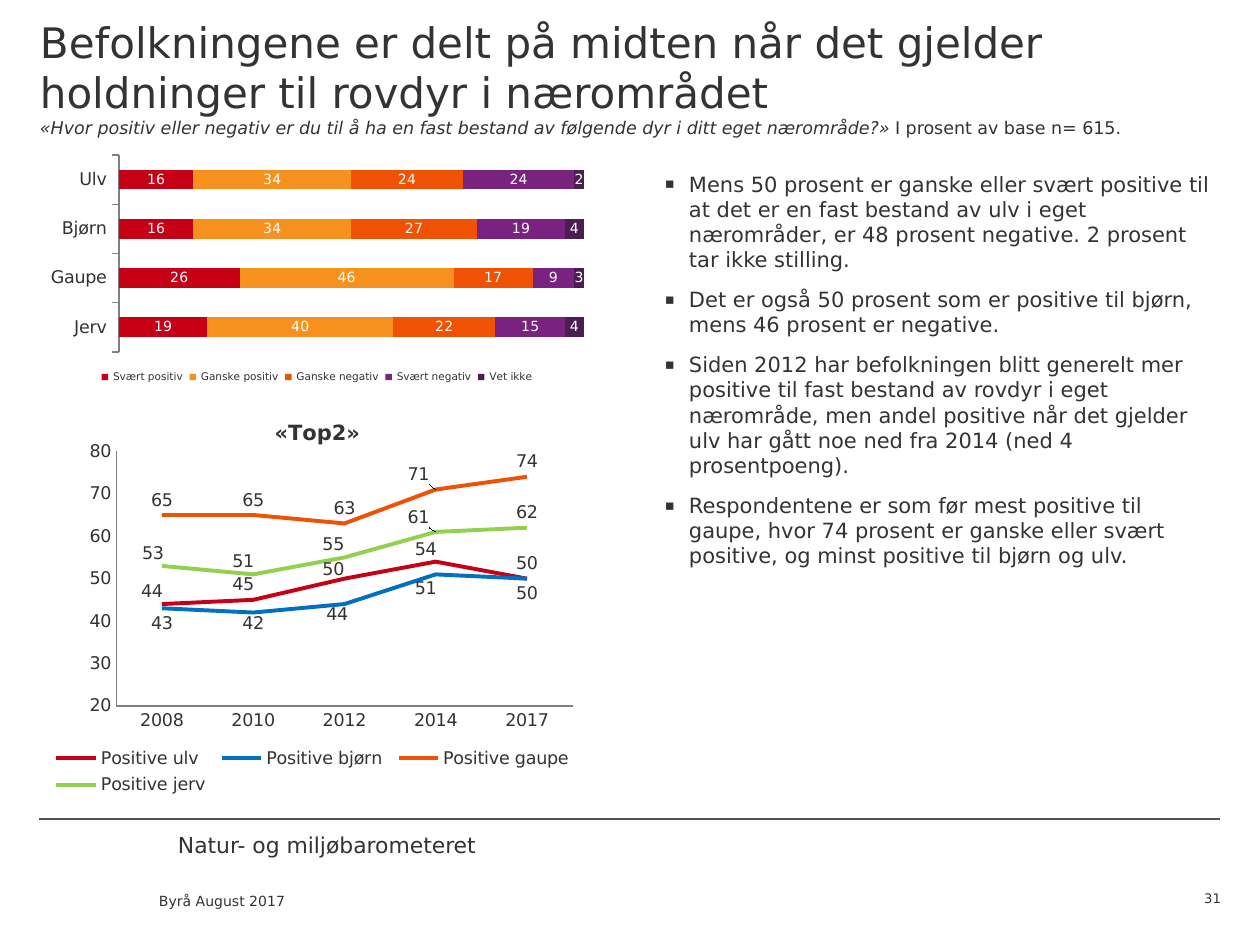
from lxml.etree import SubElement
from pptx import Presentation
from pptx.chart.data import CategoryChartData
from pptx.dml.color import RGBColor
from pptx.enum.chart import XL_CHART_TYPE as ChartType
from pptx.enum.chart import XL_LABEL_POSITION as LabelPosition
from pptx.enum.chart import XL_LEGEND_POSITION as LegendPosition
from pptx.enum.chart import XL_MARKER_STYLE as MarkerStyle
from pptx.enum.chart import XL_TICK_MARK as TickMark
from pptx.enum.shapes import MSO_CONNECTOR as Connector
from pptx.enum.text import MSO_ANCHOR as Anchor
from pptx.enum.text import PP_ALIGN as Align
from pptx.oxml import parse_xml
from pptx.oxml.ns import nsdecls, qn
from pptx.util import Pt

SCALE = 914400 / 126
FONT = "DejaVu Sans"
COLORS = {
    "text": "333333", "white": "FFFFFF", "rule": "525252", "axis": "808080",
    "red": "C50017", "amber": "F7911E", "orange": "EF5205", "purple": "7A2280",
    "plum": "4C1D52", "blue": "0070C0", "green": "92D050",
}
NO_LEADER_LINES = (
    f'<c:extLst {nsdecls("c")}><c:ext uri="{{CE6537A1-D6FC-4f65-9D91-7224C49458BB}}" '
    'xmlns:c15="http://schemas.microsoft.com/office/drawing/2012/chart">'
    '<c15:showLeaderLines val="0"/></c:ext></c:extLst>')


def px(value):
    return round(value * SCALE)


def color(name):
    return RGBColor.from_string(COLORS[name])


def set_layout(element, index, target=None, edge=True, **fractions):
    for old in element.findall(qn("c:layout")):
        element.remove(old)
    layout = parse_xml(f"<c:layout {nsdecls('c')}><c:manualLayout/></c:layout>")
    settings = {"layoutTarget": target} if target else {}
    if edge:
        settings.update(xMode="edge", yMode="edge")
    settings.update(fractions)
    for key, value in settings.items():
        SubElement(layout[0], qn(f"c:{key}")).set("val", str(value))
    element.insert(index, layout)


class SlideBuilder:
    def __init__(self, slide):
        self.slide = slide

    def style(self, font, size, name="text", italic=None, bold=None):
        font.name = FONT
        font.size = Pt(size)
        font.color.rgb = color(name)
        font.italic = italic
        font.bold = bold

    def run(self, paragraph, text, size, italic=None, bold=None):
        run = paragraph.add_run()
        run.text = text
        self.style(run.font, size, italic=italic, bold=bold)

    def text_frame(self, left, top, width, height, inset_top=0, anchor=Anchor.TOP):
        shape = self.slide.shapes.add_textbox(px(left), px(top), px(width), px(height))
        frame = shape.text_frame
        frame.word_wrap = True
        frame.vertical_anchor = anchor
        frame.margin_left = frame.margin_right = frame.margin_bottom = 0
        frame.margin_top = px(inset_top)
        return frame

    def label(self, text, size, box, align=Align.LEFT, anchor=Anchor.TOP):
        paragraph = self.text_frame(*box, anchor=anchor).paragraphs[0]
        paragraph.alignment = align
        self.run(paragraph, text, size)

    def heading(self, title, question, base, box):
        paragraph = self.text_frame(*box, inset_top=29).paragraphs[0]
        self.run(paragraph, title, 24)
        paragraph.add_line_break()
        self.run(paragraph, question, 10, italic=True)
        self.run(paragraph, base, 10)

    def bullets(self, texts, size, box):
        frame = self.text_frame(*box, inset_top=29)
        for index, text in enumerate(texts):
            paragraph = frame.add_paragraph() if index else frame.paragraphs[0]
            properties = paragraph._p.get_or_add_pPr()
            properties.set("marL", str(px(24)))
            properties.set("indent", str(-px(24)))
            paragraph.space_before = Pt(size * 0.2 if index else 0)
            paragraph.space_after = Pt(6)
            SubElement(properties, qn("a:buSzPct")).set("val", "70000")
            SubElement(properties, qn("a:buFont")).set("typeface", FONT)
            SubElement(properties, qn("a:buChar")).set("char", "▪")
            self.run(paragraph, text, size)

    def rule(self, left, right, y):
        line = self.slide.shapes.add_connector(
            Connector.STRAIGHT, px(left), px(y), px(right), px(y))
        line.line.color.rgb = color("rule")
        line.line.width = Pt(0.75)
        SubElement(line._element.spPr, qn("a:effectLst"))

    def chart(self, kind, categories, series, box, plot_layout, legend_size):
        data = CategoryChartData(number_format="0")
        data.categories = categories
        for name, _, values in series:
            data.add_series(name, values)
        chart = self.slide.shapes.add_chart(kind, *map(px, box), data).chart
        self.style(chart.font, 10)
        chart.has_title = False
        chart.has_legend = True
        chart.legend.position = LegendPosition.BOTTOM
        chart.legend.include_in_layout = False
        self.style(chart.legend.font, legend_size)
        chart.plots[0].vary_by_categories = False
        set_layout(chart._chartSpace.chart.plotArea, 0, target="inner", **plot_layout)
        chart.value_axis.has_major_gridlines = False
        for axis in (chart.category_axis, chart.value_axis):
            axis.major_tick_mark = axis.minor_tick_mark = TickMark.NONE
            axis.format.line.color.rgb = color("axis")
            axis.format.line.width = Pt(0.75)
            self.style(axis.tick_labels.font, 10)
        return chart

    def value_labels(self, series, size, name, position):
        labels = series.data_labels
        labels.show_value = True
        labels.number_format = "0"
        labels.number_format_is_linked = False
        labels.position = position
        self.style(labels.font, size, name)

    def stacked_bars(self, categories, series, box):
        chart = self.chart(ChartType.BAR_STACKED, categories, series, box,
                           dict(x=0.144, y=0.017, w=0.836, h=0.831), 6)
        chart.category_axis.reverse_order = True
        chart.category_axis.major_tick_mark = TickMark.OUTSIDE
        chart.value_axis.minimum_scale = 0
        chart.value_axis.maximum_scale = 100
        chart.value_axis.visible = False
        plot = chart.plots[0]
        plot.gap_width = 150
        plot.overlap = 100
        for item, (_, fill, _) in zip(plot.series, series):
            item.format.fill.solid()
            item.format.fill.fore_color.rgb = color(fill)
            self.value_labels(item, 8, "white", LabelPosition.CENTER)

    def trend_lines(self, title, categories, series, label_shifts, box):
        chart = self.chart(ChartType.LINE, categories, series, box,
                           dict(x=0.139, y=0.13, w=0.821, h=0.632), 10)
        chart.has_title = True
        paragraph = chart.chart_title.text_frame.paragraphs[0]
        self.run(paragraph, title, 12, bold=True)
        chart.chart_title.include_in_layout = True
        set_layout(chart._chartSpace.chart.find(qn("c:title")), 1, x=0.417, y=0.038)
        set_layout(chart.legend._element, 1, x=0.012, y=0.85, w=0.96, h=0.15)
        chart.value_axis.minimum_scale = 20
        chart.value_axis.maximum_scale = 80
        chart.value_axis.major_unit = 10
        for item, (name, stroke, _) in zip(chart.plots[0].series, series):
            item.smooth = False
            item.format.line.color.rgb = color(stroke)
            item.format.line.width = Pt(2.25)
            item.marker.style = MarkerStyle.NONE
            position = LabelPosition.BELOW if stroke == "blue" else LabelPosition.ABOVE
            self.value_labels(item, 10, "text", position)
            labels = item._element.find(qn("c:dLbls"))
            for point, (dx, dy) in label_shifts[name].items():
                data_label = item.points[point].data_label
                data_label.position = position
                self.style(data_label.font, 10)
                set_layout(labels.findall(qn("c:dLbl"))[-1], 1, edge=False,
                           x=round(dx / box[2], 3), y=round(dy / box[3], 3))
            labels.append(parse_xml(NO_LEADER_LINES))


def main():
    presentation = Presentation()
    presentation.slide_width, presentation.slide_height = px(1260), px(945)
    slide = presentation.slides.add_slide(presentation.slide_layouts[6])
    builder = SlideBuilder(slide)
    builder.rule(39, 1220, 819)
    builder.label("Natur- og miljøbarometeret", 12.5, (178, 832, 417, 53))
    builder.label("Byrå August 2017", 8, (159, 893, 402, 40))
    builder.label("31", 7.5, (1152, 871, 69, 35), Align.RIGHT, Anchor.BOTTOM)
    builder.heading(
        "Befolkningene er delt på midten når det gjelder holdninger til rovdyr i nærområdet",
        "«Hvor positiv eller negativ er du til å ha en fast bestand av følgende dyr "
        "i ditt eget nærområde?» ",
        "I prosent av base n= 615.", (40, -13, 1181, 142))
    builder.bullets([
        "Mens 50 prosent er ganske eller svært positive til at det er en fast bestand av ulv "
        "i eget nærområder, er 48 prosent negative. 2 prosent tar ikke stilling.",
        "Det er også 50 prosent som er positive til bjørn, mens 46 prosent er negative.",
        "Siden 2012 har befolkningen blitt generelt mer positive til fast bestand av rovdyr "
        "i eget nærområde, men andel positive når det gjelder ulv har gått noe ned fra 2014 "
        "(ned 4 prosentpoeng).",
        "Respondentene er som før mest positive til gaupe, hvor 74 prosent er ganske eller "
        "svært positive, og minst positive til bjørn og ulv.",
    ], 12, (665, 142, 556, 662))
    builder.trend_lines("«Top2»", ["2008", "2010", "2012", "2014", "2017"], [
        ("Positive ulv", "red", (44, 45, 50, 54, 50)),
        ("Positive bjørn", "blue", (43, 42, 44, 51, 50)),
        ("Positive gaupe", "orange", (65, 65, 63, 71, 74)),
        ("Positive jerv", "green", (53, 51, 55, 61, 62)),
    ], {
        "Positive ulv": {0: (-10, 2), 1: (-10, 0), 2: (-11, 6), 3: (-10, 3)},
        "Positive bjørn": {1: (0, -4), 2: (-7, -5), 3: (-10, -1)},
        "Positive gaupe": {3: (-17, 0)},
        "Positive jerv": {0: (-9, 3), 1: (-10, 2), 2: (-11, 2), 3: (-17, 1)},
    }, (39, 399, 556, 403))
    builder.stacked_bars(["Ulv", "Bjørn", "Gaupe", "Jerv"], [
        ("Svært positiv", "red", (16, 16, 26, 19)),
        ("Ganske positiv", "amber", (34, 34, 46, 40)),
        ("Ganske negativ", "orange", (24, 27, 17, 22)),
        ("Svært negativ", "purple", (24, 19, 9, 15)),
        ("Vet ikke", "plum", (2, 4, 3, 4)),
    ], (39, 151, 556, 237))
    presentation.save("out.pptx")


if __name__ == "__main__":
    main()
